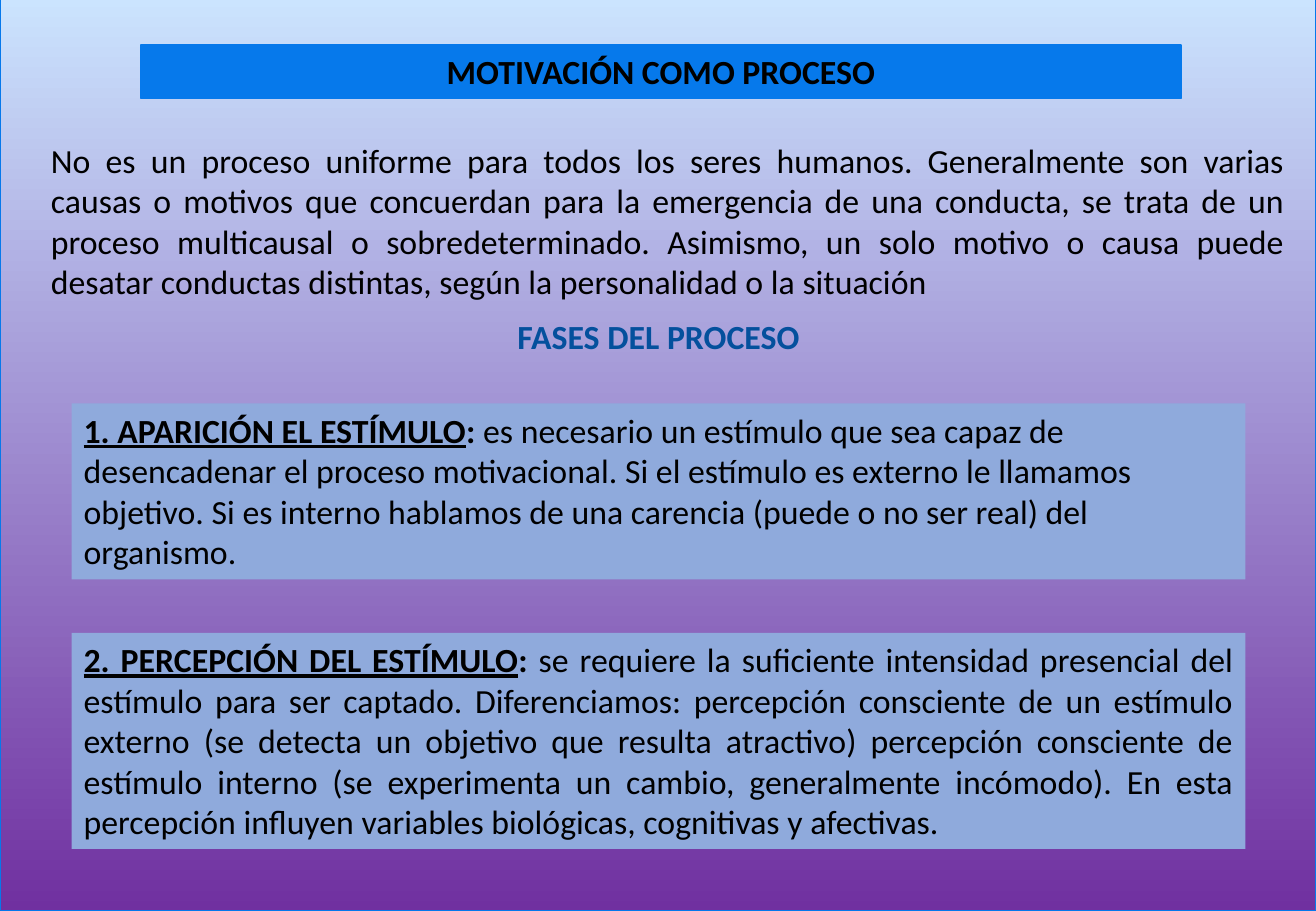
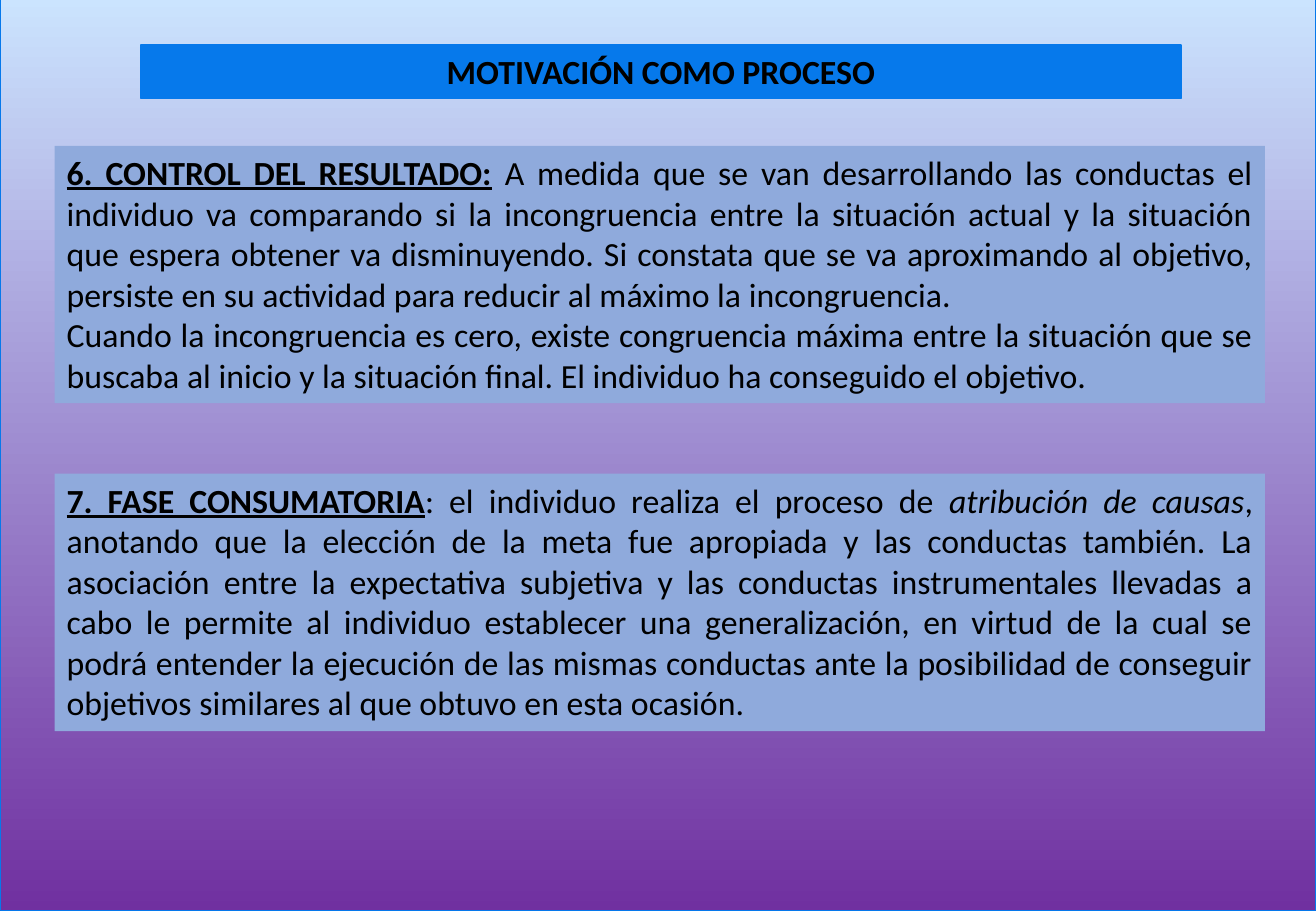
from dataclasses import dataclass

from pptx import Presentation
from pptx.dml.color import RGBColor
from pptx.enum.shapes import MSO_SHAPE
from pptx.enum.text import MSO_ANCHOR, MSO_AUTO_SIZE, PP_ALIGN
from pptx.util import Inches, Pt

RECT = MSO_SHAPE.RECTANGLE
TOP = MSO_ANCHOR.TOP
GROW = MSO_AUTO_SIZE.SHAPE_TO_FIT_TEXT
LEFT, CENTER, JUSTIFY = PP_ALIGN.LEFT, PP_ALIGN.CENTER, PP_ALIGN.JUSTIFY

BLACK = RGBColor(0x00, 0x00, 0x00)
SKY = RGBColor(0xCB, 0xE4, 0xFE)
PURPLE = RGBColor(0x70, 0x30, 0xA0)
EDGE = RGBColor(0x06, 0x78, 0xEB)
BLUE = RGBColor(0x06, 0x79, 0xEB)
NAVY = RGBColor(0x04, 0x50, 0x9D)
PANEL = RGBColor(0x8F, 0xAA, 0xDC)

FONT = "Calibri"
SIZE = Pt(20)
WIDTH, HEIGHT = 10.83, 7.5


@dataclass(frozen=True)
class Span:
    text: str
    bold: bool = False
    under: bool = False
    italic: bool = False


@dataclass(frozen=True)
class Block:
    """A box of text; each item of paras is a tuple of spans."""
    box: tuple[float, float, float, float]
    paras: tuple[tuple[Span, ...], ...]
    align: PP_ALIGN = JUSTIFY
    color: RGBColor = BLACK
    fill: RGBColor | None = None
    line: RGBColor | None = None


def lead(text: str) -> Span:
    return Span(text, bold=True, under=True)


TITLE = Block((1.16, 0.37, 8.56, 0.44),
              ((Span("MOTIVACIÓN COMO PROCESO", bold=True),),),
              CENTER, fill=BLUE, line=BLUE)

PHASES = (
    Block((0.32, 1.1, 10.35, 1.45), ((Span(
        "No es un proceso uniforme para todos los seres humanos. Generalmente "
        "son varias causas o motivos que concuerdan para la emergencia de una "
        "conducta, se trata de un proceso multicausal o sobredeterminado. "
        "Asimismo, un solo motivo o causa puede desatar conductas distintas, "
        "según la personalidad o la situación"),),)),
    Block((3.79, 2.55, 3.26, 0.77),
          ((Span("FASES DEL PROCESO", bold=True),),), CENTER, NAVY),
    Block((0.59, 3.32, 9.66, 1.45), ((
        lead("1. APARICIÓN EL ESTÍMULO"),
        Span(": ", bold=True),
        Span("es necesario un estímulo que sea capaz de desencadenar el "
             "proceso motivacional. Si el estímulo es externo le llamamos "
             "objetivo. Si es interno hablamos de una carencia (puede o no "
             "ser real) del organismo.")),), LEFT, fill=PANEL),
    Block((0.59, 5.21, 9.66, 1.78), ((
        lead("2. PERCEPCIÓN DEL ESTÍMULO"),
        Span(": ", bold=True),
        Span("se requiere la suficiente intensidad presencial del estímulo "
             "para ser captado. Diferenciamos: percepción consciente de un "
             "estímulo externo (se detecta un objetivo que resulta atractivo) "
             "percepción consciente de estímulo interno (se experimenta un "
             "cambio, generalmente incómodo). En esta percepción influyen "
             "variables biológicas, cognitivas y afectivas.")),), fill=PANEL),
)

RESULTS = (
    Block((0.45, 1.2, 9.96, 2.12), (
        (lead("6. CONTROL DEL RESULTADO:"),
         Span(" ", bold=True),
         Span("A medida que se van desarrollando las conductas el individuo "
              "va comparando si la incongruencia entre la situación actual y "
              "la situación que espera obtener va disminuyendo. Si constata "
              "que se va aproximando al objetivo, persiste en su actividad "
              "para reducir al máximo la incongruencia.")),
        (Span("Cuando la incongruencia es cero, existe congruencia máxima "
              "entre la situación que se buscaba al inicio y la situación "
              "final. El individuo ha conseguido el objetivo."),)),
        fill=PANEL),
    Block((0.45, 3.9, 9.96, 2.12), ((
        lead("7. FASE CONSUMATORIA"),
        Span(": el individuo realiza el proceso de "),
        Span("atribución de causas", italic=True),
        Span(", anotando que la elección de la meta fue apropiada y las "
             "conductas también. La asociación entre la expectativa subjetiva "
             "y las conductas instrumentales llevadas a cabo le permite al "
             "individuo establecer una generalización, en virtud de la cual "
             "se podrá entender la ejecución de las mismas conductas ante la "
             "posibilidad de conseguir objetivos similares al que obtuvo en "
             "esta ocasión.")),), fill=PANEL),
)


def add_rect(slide, box: tuple[float, float, float, float]):
    shape = slide.shapes.add_shape(RECT, *map(Inches, box))
    shape.shadow.inherit = False
    return shape


def add_back(slide) -> None:
    """Cover the slide with the vertical gradient."""
    slide.background.fill.solid()
    slide.background.fill.fore_color.rgb = BLACK
    back = add_rect(slide, (0, -0.03, WIDTH, HEIGHT + 0.03))
    back.fill.gradient()
    back.fill.gradient_angle = 270
    for stop, color, place in zip(back.fill.gradient_stops, (SKY, PURPLE), (0, 1)):
        stop.color.rgb = color
        stop.position = place
    back.line.color.rgb = EDGE
    back.line.width = Pt(0.5)


def write(frame, block: Block) -> None:
    frame.word_wrap = True
    frame.auto_size = GROW
    frame.vertical_anchor = TOP
    for i, spans in enumerate(block.paras):
        para = frame.add_paragraph() if i else frame.paragraphs[0]
        para.alignment = block.align
        for span in spans:
            run = para.add_run()
            run.text = span.text
            font = run.font
            font.name, font.size = FONT, SIZE
            font.color.rgb = block.color
            font.bold, font.italic = span.bold, span.italic
            font.underline = span.under


def add_block(slide, block: Block) -> None:
    if block.fill is None:
        shape = slide.shapes.add_textbox(*map(Inches, block.box))
    else:
        shape = add_rect(slide, block.box)
        shape.fill.solid()
        shape.fill.fore_color.rgb = block.fill
        if block.line is None:
            shape.line.fill.background()
        else:
            shape.line.color.rgb = block.line
            shape.line.width = Pt(0.75)
    write(shape.text_frame, block)


def main() -> None:
    deck = Presentation()
    deck.slide_width, deck.slide_height = Inches(WIDTH), Inches(HEIGHT)
    blank = deck.slide_layouts[6]
    for blocks in (PHASES, RESULTS):
        slide = deck.slides.add_slide(blank)
        add_back(slide)
        for block in (TITLE, *blocks):
            add_block(slide, block)
    deck.save("out.pptx")


if __name__ == "__main__":
    main()
